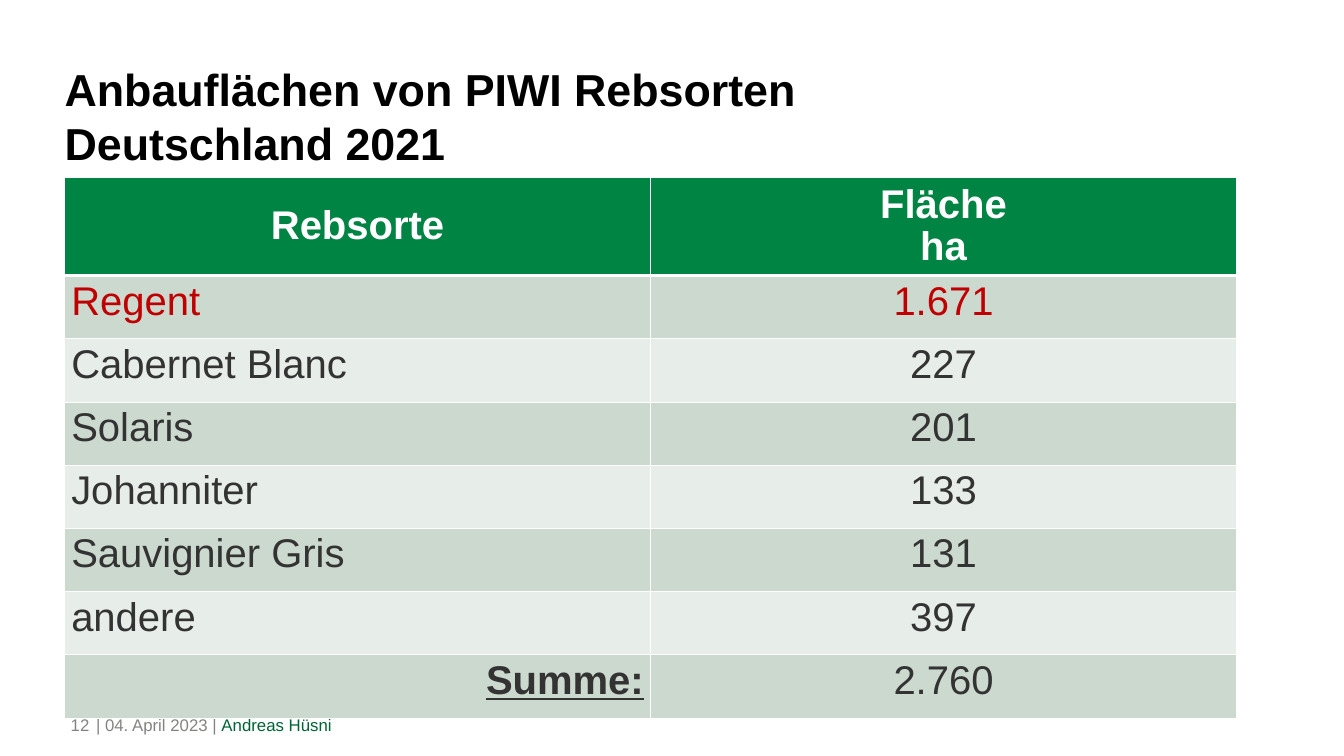
from lxml import etree
from pptx import Presentation
from pptx.dml.color import RGBColor
from pptx.enum.text import MSO_ANCHOR, PP_ALIGN
from pptx.oxml.ns import qn
from pptx.util import Cm, Pt

LEFT, CENTER, RIGHT = PP_ALIGN.LEFT, PP_ALIGN.CENTER, PP_ALIGN.RIGHT
TOP, MIDDLE = MSO_ANCHOR.TOP, MSO_ANCHOR.MIDDLE

GREEN, DARK_GREEN, RED = "008444", "006333", "C00000"
BLACK, TEXT, GREY, WHITE = "000000", "333333", "828480", "FFFFFF"
BANDS = ["CCD9CF", "E7EDE9"]

TITLE = ["Anbauflächen von PIWI Rebsorten", "Deutschland 2021"]
PAGE_NUMBER = "12"
DATE, AUTHOR = "| 04. April 2023 | ", "Andreas Hüsni"
HEADER = [["Rebsorte"], ["Fläche", "ha"]]
VARIETIES = [
    ("Regent", "1.671"),
    ("Cabernet Blanc", "227"),
    ("Solaris", "201"),
    ("Johanniter", "133"),
    ("Sauvignier Gris", "131"),
    ("andere", "397"),
    ("Summe:", "2.760"),
]

TITLE_FORMAT = {"size": Pt(48), "bold": True}
FOOTER_FORMAT = {"size": Pt(18)}
HEADER_FORMAT = {"size": Pt(42.9), "bold": True}
BODY_FORMAT = {"size": Pt(42.9), "bold": False}
SUM_FORMAT = {"size": Pt(42.9), "bold": True, "underline": True}

TABLE_LEFT, TABLE_TOP = 2.44, 6.71
COLUMN_WIDTH, HEADER_HEIGHT, ROW_HEIGHT = 22.15, 3.63, 2.39
FOOTER_TOP, FOOTER_HEIGHT = 26.9, 1.68


def rgb(value):
    return RGBColor.from_string(value)


def add_run(paragraph, text, color, values):
    run = paragraph.add_run()
    run.text = text
    run.font.name = "Arial"
    run.font.color.rgb = rgb(color)
    for attribute, value in values.items():
        setattr(run.font, attribute, value)


def write_lines(frame, lines, color, values, align, spacing=1.0):
    for index, line in enumerate(lines):
        paragraph = frame.add_paragraph() if index else frame.paragraphs[0]
        paragraph.alignment = align
        paragraph.line_spacing = spacing
        add_run(paragraph, line, color, values)


def add_text(slide, left, top, width, height, margins):
    frame = slide.shapes.add_textbox(Cm(left), Cm(top), Cm(width), Cm(height)).text_frame
    frame.word_wrap = True
    for side, margin in margins.items():
        setattr(frame, f"margin_{side}", Cm(margin))
    return frame


def style_cell(cell, fill, widths, anchor):
    properties = cell._tc.get_or_add_tcPr()
    for side, width in widths.items():
        line = etree.SubElement(properties, qn(f"a:ln{side}"), w=str(Pt(width)))
        solid = etree.SubElement(line, qn("a:solidFill"))
        etree.SubElement(solid, qn("a:srgbClr"), val=WHITE)
    cell.fill.solid()
    cell.fill.fore_color.rgb = rgb(fill)
    cell.vertical_anchor = anchor


def add_variety_table(slide):
    row_count = len(VARIETIES) + 1
    table = slide.shapes.add_table(
        row_count, len(HEADER), Cm(TABLE_LEFT), Cm(TABLE_TOP),
        Cm(COLUMN_WIDTH * len(HEADER)), Cm(HEADER_HEIGHT + ROW_HEIGHT * len(VARIETIES)),
    ).table
    for column in table.columns:
        column.width = Cm(COLUMN_WIDTH)
    for index, row in enumerate(table.rows):
        row.height = Cm(ROW_HEIGHT if index else HEADER_HEIGHT)

    for column, lines in enumerate(HEADER):
        cell = table.cell(0, column)
        style_cell(cell, GREEN, {"L": 1, "R": 1, "T": 1, "B": 3}, MIDDLE)
        write_lines(cell.text_frame, lines, WHITE, HEADER_FORMAT, CENTER, 0.95)

    for row, entry in enumerate(VARIETIES, start=1):
        is_sum = row == len(VARIETIES)
        color = RED if row == 1 else TEXT
        name_style = (SUM_FORMAT, RIGHT) if is_sum else (BODY_FORMAT, LEFT)
        styles = [name_style, (BODY_FORMAT, CENTER)]
        for column, (text, (values, align)) in enumerate(zip(entry, styles)):
            cell = table.cell(row, column)
            top_width = 3 if row == 1 else 1
            style_cell(cell, BANDS[(row - 1) % 2], {"L": 1, "R": 1, "T": top_width, "B": 1}, TOP)
            write_lines(cell.text_frame, [text], color, values, align)


def main():
    presentation = Presentation()
    presentation.slide_width, presentation.slide_height = Cm(50.8), Cm(28.58)
    slide = presentation.slides.add_slide(presentation.slide_layouts[6])

    number = add_text(slide, 0, FOOTER_TOP, 3.81, FOOTER_HEIGHT, {"right": 0.43})
    write_lines(number, [PAGE_NUMBER], GREY, FOOTER_FORMAT, RIGHT)
    footer = add_text(slide, 3.38, FOOTER_TOP, 34.8, FOOTER_HEIGHT, {"left": 0.25})
    write_lines(footer, [DATE], GREY, FOOTER_FORMAT, LEFT)
    add_run(footer.paragraphs[0], AUTHOR, DARK_GREEN, FOOTER_FORMAT)

    no_margins = dict.fromkeys(["left", "top", "right", "bottom"], 0)
    title = add_text(slide, TABLE_LEFT, 2.34, 36.98, 3.9, no_margins)
    write_lines(title, TITLE, BLACK, TITLE_FORMAT, LEFT)

    add_variety_table(slide)
    presentation.save("out.pptx")


if __name__ == "__main__":
    main()
